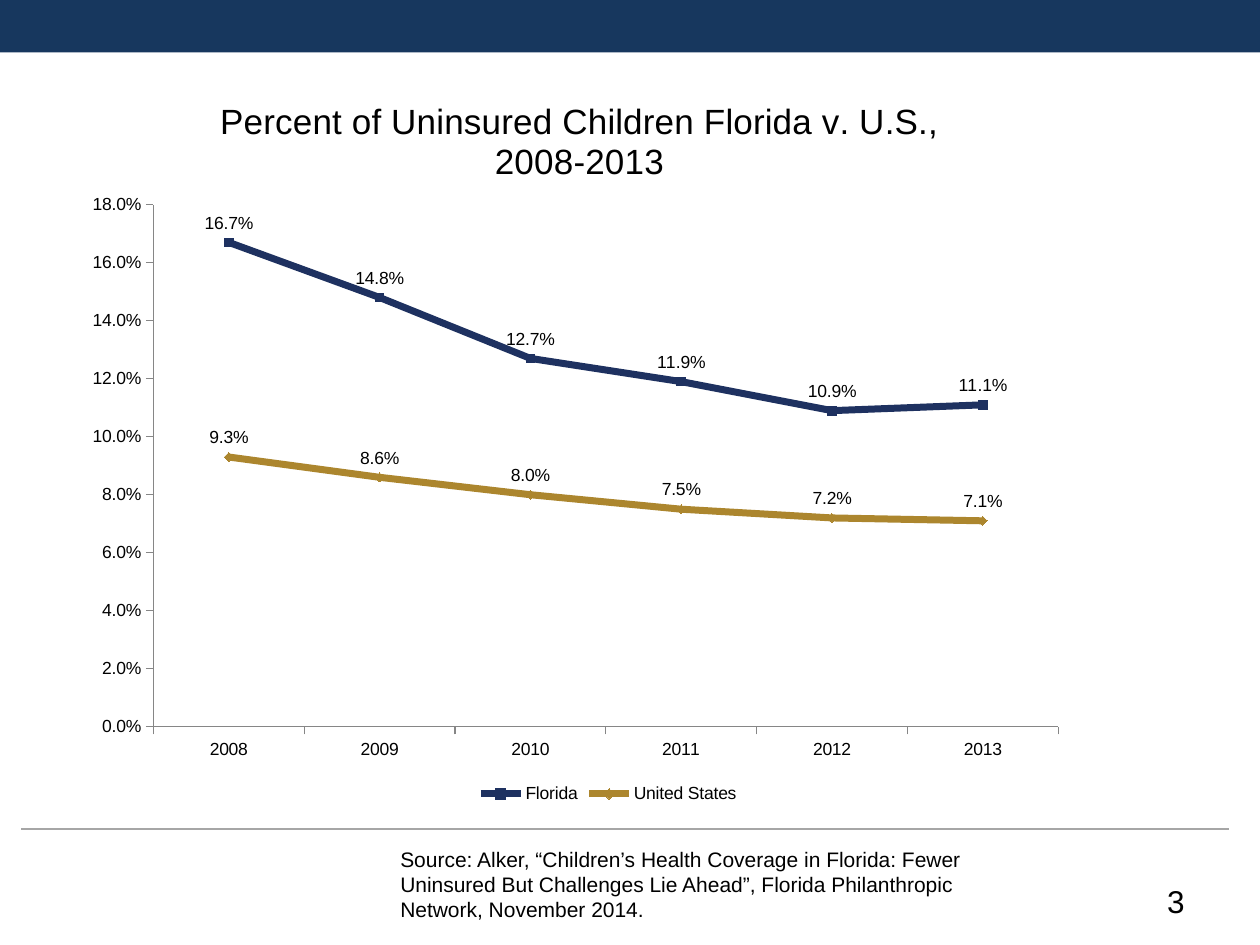
"""Build a slide with a line chart of uninsured children in Florida and the U.S."""
from lxml.etree import SubElement
from pptx import Presentation
from pptx.chart.data import CategoryChartData
from pptx.dml.color import RGBColor
from pptx.enum.chart import (XL_CHART_TYPE, XL_LABEL_POSITION, XL_LEGEND_POSITION,
                             XL_MARKER_STYLE, XL_TICK_MARK)
from pptx.enum.shapes import MSO_CONNECTOR, MSO_SHAPE
from pptx.enum.text import MSO_ANCHOR, PP_ALIGN
from pptx.oxml import parse_xml
from pptx.oxml.ns import nsdecls, qn
from pptx.util import Cm, Pt


def style_font(font, size, color="000000"):
    font.name = "Arial"
    font.size = Pt(size)
    font.bold = False
    font.color.rgb = RGBColor.from_string(color)


def place(element, index, **fractions):
    for old_layout in element.findall(qn("c:layout")):
        element.remove(old_layout)
    settings = dict(xMode="edge", yMode="edge", **fractions)
    if "w" in fractions:
        settings = dict(layoutTarget="inner", **settings)
    children = "".join(f'<c:{name} val="{value}"/>' for name, value in settings.items())
    element.insert(index, parse_xml(
        f'<c:layout {nsdecls("c")}><c:manualLayout>{children}</c:manualLayout></c:layout>'))


deck = Presentation()
deck.slide_width, deck.slide_height = Cm(25.4), Cm(19.05)
page = deck.slides.add_slide(deck.slide_layouts[6])

banner = page.shapes.add_shape(MSO_SHAPE.RECTANGLE, 0, 0, deck.slide_width, Cm(1.06))
banner.shadow.inherit = False
banner.fill.solid()
banner.fill.fore_color.rgb = RGBColor.from_string("17375E")
banner.line.fill.background()

footer_rule = page.shapes.add_connector(
    MSO_CONNECTOR.STRAIGHT, Cm(0.43), Cm(16.71), Cm(24.77), Cm(16.71))
footer_rule.line.color.rgb = RGBColor.from_string("A6A6A6")
footer_rule.line.width = Pt(0.75)
SubElement(footer_rule._element.spPr, qn("a:effectLst"))

rates = CategoryChartData(number_format="0.0%")
rates.categories = [str(year) for year in range(2008, 2014)]
rates.add_series("Florida", [0.167, 0.148, 0.127, 0.119, 0.109, 0.111])
rates.add_series("United States", [0.093, 0.086, 0.08, 0.075, 0.072, 0.071])
chart = page.shapes.add_chart(XL_CHART_TYPE.LINE_MARKERS, Cm(1.47), Cm(1.42),
                              Cm(20.27), Cm(15.04), rates).chart
style_font(chart.font, 10)

chart.has_title = True
title = chart.chart_title
title.text_frame.text = "Percent of Uninsured Children Florida v. U.S., 2008-2013"
style_font(title.text_frame.paragraphs[0].runs[0].font, 20)
place(title._element, 1, x=0.14, y=0.03)

chart.has_legend = True
chart.legend.position = XL_LEGEND_POSITION.BOTTOM
chart.legend.include_in_layout = False
style_font(chart.legend.font, 10)
place(chart.legend._element, 1, x=0.4, y=0.95)
place(chart._chartSpace.chart.plotArea, 0, x=0.08, y=0.18, w=0.9, h=0.7)

for axis in (chart.category_axis, chart.value_axis):
    axis.has_major_gridlines = False
    axis.major_tick_mark = XL_TICK_MARK.OUTSIDE
    axis.minor_tick_mark = XL_TICK_MARK.NONE
    axis.format.line.color.rgb = RGBColor.from_string("868686")
    axis.format.line.width = Pt(0.75)
    style_font(axis.tick_labels.font, 10)
chart.value_axis.minimum_scale = 0
chart.value_axis.maximum_scale = 0.18
chart.value_axis.major_unit = 0.02
chart.value_axis.tick_labels.number_format = "0.0%"
chart.value_axis.tick_labels.number_format_is_linked = False

plot = chart.plots[0]
plot.vary_by_categories = False
looks = [("1E3160", XL_MARKER_STYLE.SQUARE), ("AC862E", XL_MARKER_STYLE.DIAMOND)]
for series, (color, marker_style) in zip(plot.series, looks):
    series.smooth = False
    series.format.line.width = Pt(4)
    series.marker.style = marker_style
    series.marker.size = 5
    series.marker.format.fill.solid()
    for paint in (series.format.line.color, series.marker.format.fill.fore_color,
                  series.marker.format.line.color):
        paint.rgb = RGBColor.from_string(color)
    labels = series.data_labels
    labels.show_value = True
    labels.position = XL_LABEL_POSITION.ABOVE
    labels.number_format = "0.0%"
    labels.number_format_is_linked = False
    style_font(labels.font, 10)

source = ("Source: Alker, “Children’s Health Coverage in Florida: Fewer Uninsured But "
          "Challenges Lie Ahead”, Florida Philanthropic Network, November 2014.")
notes = [
    (source, 7.82, 16.94, 12.7, 1.8, 12, PP_ALIGN.LEFT, MSO_ANCHOR.TOP),
    ("3", 18.21, 17.65, 5.92, 1.02, 18, PP_ALIGN.RIGHT, MSO_ANCHOR.MIDDLE),
]
for text, left, top, width, height, size, alignment, anchor in notes:
    box = page.shapes.add_textbox(Cm(left), Cm(top), Cm(width), Cm(height))
    box.text_frame.word_wrap = True
    box.text_frame.vertical_anchor = anchor
    box.text_frame.text = text
    para = box.text_frame.paragraphs[0]
    para.alignment = alignment
    style_font(para.runs[0].font, size)

deck.save("out.pptx")
